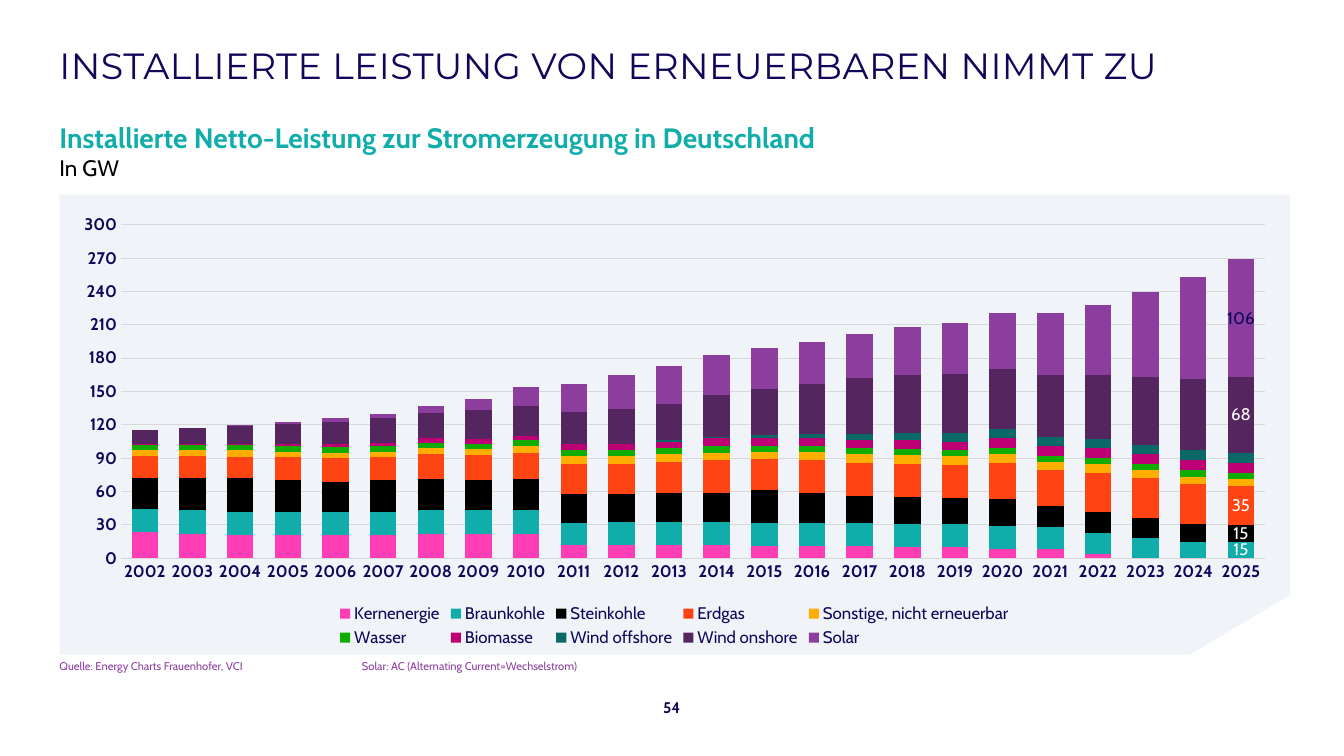
from dataclasses import dataclass

from lxml.etree import SubElement
from pptx import Presentation
from pptx.chart.data import CategoryChartData as ChartData
from pptx.dml.color import RGBColor as RGB
from pptx.enum.chart import XL_CHART_TYPE as ChartType
from pptx.enum.chart import XL_LEGEND_POSITION as LegendPos
from pptx.enum.chart import XL_TICK_MARK as Tick
from pptx.enum.text import MSO_ANCHOR as Anchor
from pptx.enum.text import PP_ALIGN as Align
from pptx.oxml import parse_xml
from pptx.oxml.ns import nsdecls, qn
from pptx.util import Pt


@dataclass(frozen=True)
class Theme:
    head_font: str = "Montserrat"
    body_font: str = "Cabin"
    navy: str = "10065A"
    teal: str = "10ADAA"
    purple: str = "8C3E9F"
    black: str = "000000"
    white: str = "FFFFFF"
    panel: str = "F0F3F7"
    grid: str = "D9D9D9"
    title: float = 26
    subtitle: float = 20
    unit: float = 16
    chart: float = 12
    page: float = 11
    source: float = 8


T = Theme()
LEFT, WIDTH = 42.5, 878.5
YEARS = range(2002, 2026)

# Installed capacity in GW: name, colour, label colour of the last year, values
SERIES = [
    ("Kernenergie", "FF3EB5", None,
     [24, 22, 21, 21, 21, 21, 22, 22, 22, 12, 12, 12,
      12, 11, 11, 11, 10, 10, 8, 8, 4, 0, 0, 0]),
    ("Braunkohle", T.teal, T.white,
     [20, 21, 21, 21, 21, 21, 21, 21, 21, 20, 21, 21,
      21, 21, 21, 21, 21, 21, 21, 20, 19, 18, 15, 15]),
    ("Steinkohle", T.black, T.white,
     [28, 29, 30, 28, 27, 28, 28, 27, 28, 26, 25, 26,
      26, 29, 27, 24, 24, 23, 24, 19, 19, 18, 16, 15]),
    ("Erdgas", "FF4414", T.white,
     [20, 20, 19, 21, 21, 21, 23, 23, 24, 27, 27, 28,
      29, 28, 29, 30, 30, 30, 33, 32, 35, 36, 36, 35]),
    ("Sonstige, nicht erneuerbar", "FFAD00", None,
     [5, 5, 6, 5, 5, 5, 5, 5, 6, 7, 7, 7,
      7, 7, 8, 8, 8, 8, 8, 8, 8, 7, 6, 6]),
    ("Wasser", "10AD00", None,
     [5, 5, 5, 5, 5, 5, 5, 5, 5, 5, 5, 5,
      6, 5, 5, 5, 5, 5, 5, 5, 5, 6, 6, 6]),
    ("Biomasse", "BE0075", None,
     [1, 1, 1, 2, 3, 3, 4, 4, 4, 6, 6, 6,
      7, 7, 7, 7, 8, 8, 9, 9, 9, 9, 9, 9]),
    ("Wind offshore", "0A6866", None,
     [None] * 7 + [0, 0, 0, 0, 1,
      1, 3, 4, 6, 7, 8, 8, 8, 8, 8, 9, 9]),
    ("Wind onshore", "54255F", T.white,
     [12, 14, 16, 18, 20, 22, 23, 26, 27, 29, 31, 33,
      38, 41, 45, 50, 52, 53, 54, 56, 58, 61, 64, 68]),
    ("Solar", T.purple, T.navy,
     [0, 0, 1, 2, 3, 4, 6, 10, 17, 25, 31, 34,
      36, 37, 38, 40, 43, 46, 51, 56, 63, 77, 92, 106]),
]


class SlideBuilder:
    def __init__(self, slide, theme):
        self.s, self.t = slide, theme

    def style_font(self, font, size, color, name=None, bold=False):
        font.name, font.size, font.bold = name or self.t.body_font, Pt(size), bold
        font.color.rgb = RGB.from_string(color)

    def fill(self, fmt, color):
        fmt.fill.solid()
        fmt.fill.fore_color.rgb = RGB.from_string(color)

    def text(self, box, text, size, color, name=None, bold=False,
             align=Align.LEFT, anchor=Anchor.TOP, spacing=None, tab=None):
        tf = self.s.shapes.add_textbox(*map(Pt, box)).text_frame
        tf.word_wrap, tf.vertical_anchor = True, anchor
        tf.margin_left = tf.margin_right = tf.margin_top = tf.margin_bottom = 0
        p = tf.paragraphs[0]
        p.alignment = align
        if tab:
            stops = SubElement(p._p.get_or_add_pPr(), qn("a:tabLst"))
            SubElement(stops, qn("a:tab"), pos=str(Pt(tab)), algn="l")
        r = p.add_run()
        r.text = text
        self.style_font(r.font, size, color, name, bold)
        if spacing:
            r.font._element.set("spc", str(spacing))

    def panel(self, points, color):
        start, *rest = [(Pt(x), Pt(y)) for x, y in points]
        builder = self.s.shapes.build_freeform(*start)
        builder.add_line_segments(rest, close=True)
        sp = builder.convert_to_shape()
        sp.shadow.inherit = False
        self.fill(sp, color)
        sp.line.fill.background()

    def place_plot(self, plot_area, x, y, w, h):
        """Fix the inner plot at fractions of the chart area."""
        old = plot_area.find(qn("c:layout"))
        if old is not None:
            plot_area.remove(old)
        plot_area.insert(0, parse_xml(
            f'<c:layout {nsdecls("c")}><c:manualLayout><c:layoutTarget val="inner"/>'
            '<c:xMode val="edge"/><c:yMode val="edge"/>'
            f'<c:x val="{x}"/><c:y val="{y}"/><c:w val="{w}"/><c:h val="{h}"/>'
            '</c:manualLayout></c:layout>'))

    def grid_line(self, line):
        line.color.rgb, line.width = RGB.from_string(self.t.grid), Pt(0.75)

    def stacked_chart(self, box, categories, series):
        data = ChartData(number_format="0")
        data.categories = [str(c) for c in categories]
        for name, _, _, values in series:
            data.add_series(name, values)
        chart = self.s.shapes.add_chart(
            ChartType.COLUMN_STACKED, *map(Pt, box), data).chart
        chart.has_title = False
        self.style_font(chart.font, self.t.chart, self.t.navy)

        # Columns and labels of the last year
        plot = chart.plots[0]
        plot.gap_width, plot.overlap, plot.vary_by_categories = 80, 100, False
        for ser, (_, color, label_color, values) in zip(plot.series, series):
            self.fill(ser.format, color)
            ser.invert_if_negative = False
            if label_color:
                label = ser.points[len(values) - 1].data_label
                self.style_font(label.font, self.t.chart, label_color)

        # Axes
        value_axis, cat_axis = chart.value_axis, chart.category_axis
        for axis in (value_axis, cat_axis):
            axis.major_tick_mark = axis.minor_tick_mark = Tick.NONE
            self.style_font(axis.tick_labels.font, self.t.chart, self.t.navy, bold=True)
            axis._element.txPr.find(qn("a:bodyPr")).set("rot", "0")
        value_axis.minimum_scale, value_axis.maximum_scale = 0, 300
        value_axis.major_unit = 30
        value_axis.tick_labels.number_format = "0"
        value_axis.tick_labels.number_format_is_linked = False
        value_axis.format.line.fill.background()
        self.grid_line(value_axis.major_gridlines.format.line)
        self.grid_line(cat_axis.format.line)

        # Legend and plot position
        chart.has_legend = True
        legend = chart.legend
        legend.position, legend.include_in_layout = LegendPos.BOTTOM, False
        self.style_font(legend.font, self.t.chart, self.t.navy)
        self.place_plot(chart._chartSpace.chart.plotArea, 0.05, 0.04, 0.93, 0.75)


def main():
    prs = Presentation()
    prs.slide_width, prs.slide_height = Pt(960), Pt(540)
    s = SlideBuilder(prs.slides.add_slide(prs.slide_layouts[6]), T)

    # Panel with cut corner
    s.panel([(LEFT, 139), (921.5, 139), (921.5, 425), (850, 467.5), (LEFT, 467.5)],
            T.panel)

    # Headings
    s.text((LEFT, 11, WIDTH, 70.5), "INSTALLIERTE LEISTUNG VON ERNEUERBAREN NIMMT ZU",
           T.title, T.navy, T.head_font, anchor=Anchor.MIDDLE, spacing=30)
    s.text((LEFT, 86, WIDTH, 22.5),
           "Installierte Netto-Leistung zur Stromerzeugung in Deutschland",
           T.subtitle, T.teal, bold=True)
    s.text((LEFT, 110, WIDTH, 20), "In GW", T.unit, T.black)

    # Chart
    s.stacked_chart((LEFT, 148, WIDTH, 317.5), YEARS, SERIES)

    # Footer
    s.text((LEFT, 471, 793.5, 9.5),
           "Quelle: Energy Charts Frauenhofer, VCI\tSolar: AC (Alternating Current=Wechselstrom)",
           T.source, T.purple, tab=216)
    s.text((458.5, 495.5, 42.5, 20), "54", T.page, T.navy, bold=True,
           align=Align.CENTER, anchor=Anchor.MIDDLE)

    prs.save("out.pptx")


if __name__ == "__main__":
    main()
